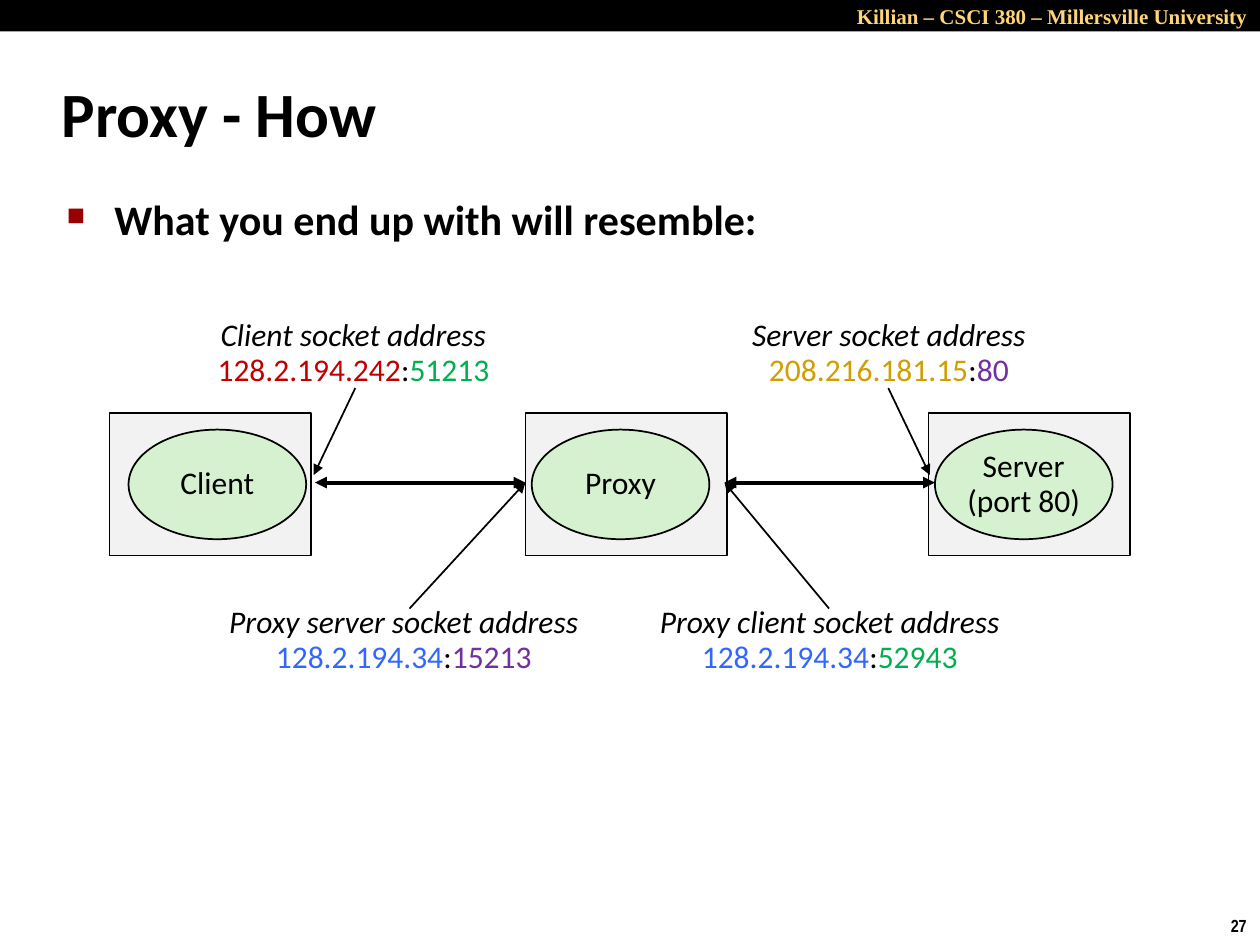
"""Build the slide that shows a proxy between a client and a server."""
from lxml import etree
from pptx import Presentation, util as u
from pptx.dml.color import RGBColor
from pptx.enum import shapes, text
from pptx.oxml.ns import qn

COLORS = {
    "black": "000000", "white": "FFFFFF", "gold": "FFD579", "bullet": "990000",
    "host": "F2F2F2", "process": "D5F1CF", "red": "C00000", "green": "00B050",
    "ochre": "D09E00", "purple": "7030A0", "blue": "3366FF",
}

deck = Presentation()
deck.slide_width, deck.slide_height = u.Inches(10), u.Inches(7.5)
COL, ROW = deck.slide_width / 100, deck.slide_height / 75


def cells(left, top, *size):
    """Turn columns and rows of the grid into lengths."""
    return [u.Emu(round(n * unit)) for n, unit in zip((left, top, *size), (COL, ROW) * 2)]


def write(shape, lines, size=18, font="Calibri", bold=False, align="CENTER",
          anchor="MIDDLE", spacing=0.93, wrap=False):
    """Fill a shape with lines of (words, colour, italic) runs."""
    frame = shape.text_frame
    frame.word_wrap = wrap
    frame.auto_size = text.MSO_AUTO_SIZE.NONE
    frame.vertical_anchor = text.MSO_ANCHOR[anchor]
    for number, line in enumerate(lines):
        paragraph = frame.add_paragraph() if number else frame.paragraphs[0]
        paragraph.alignment = text.PP_ALIGN[align]
        paragraph.line_spacing = spacing
        for words, color, italic in line:
            run = paragraph.add_run()
            run.text = words
            run.font.name, run.font.size = font, u.Pt(size)
            run.font.bold, run.font.italic = bold, italic
            run.font.color.rgb = RGBColor.from_string(COLORS[color])


slide = deck.slides.add_slide(deck.slide_layouts[5])
slide.background.fill.solid()
slide.background.fill.fore_color.rgb = RGBColor.from_string(COLORS["white"])

band = slide.shapes.add_shape(shapes.MSO_SHAPE.RECTANGLE, *cells(0, 0, 100, 2.5))
band.shadow.inherit = False
band.fill.solid()
band.fill.fore_color.rgb = RGBColor.from_string(COLORS["black"])
band.line.fill.background()

course = slide.shapes.add_textbox(*cells(50.8, 0, 49.2, 2.9))
write(course, [[("Killian – CSCI 380 – Millersville University", "gold", False)]],
      size=12, font="Times New Roman", bold=True, align="RIGHT", anchor="TOP", wrap=True)
page = slide.shapes.add_textbox(*cells(96.7, 72.3, 3.4, 2.7))
write(page, [[("27", "black", False)]],
      size=10, font="Arial Narrow", bold=True, align="LEFT", anchor="TOP")

heading = slide.shapes.title
heading.left, heading.top, heading.width, heading.height = cells(3.9, 4.8, 83, 8.3)
write(heading, [[("Proxy - How", "black", False)]],
      size=36, bold=True, align="LEFT", spacing=1.0, wrap=True)

outcome = slide.shapes.add_textbox(*cells(4.3, 14.9, 86.4, 9.3))
write(outcome, [[("What you end up with will resemble:", "black", False)]],
      size=24, bold=True, align="LEFT", anchor="TOP", spacing=1.0, wrap=True)
indent = outcome.text_frame.paragraphs[0]._p.get_or_add_pPr()
indent.set("marL", str(u.Inches(0.38)))
indent.set("indent", str(u.Inches(-0.38)))
bullet_color = etree.SubElement(indent, qn("a:buClr"))
etree.SubElement(bullet_color, qn("a:srgbClr"), val=COLORS["bullet"])
etree.SubElement(indent, qn("a:buSzPct"), val="60000")
etree.SubElement(indent, qn("a:buChar"), char="■")

hosts = [
    (8.7, 10.2, ["Client"]),
    (41.7, 42.2, ["Proxy"]),
    (73.7, 74.2, ["Server", "(port 80)"]),
]
for host_left, process_left, names in hosts:
    host = slide.shapes.add_shape(shapes.MSO_SHAPE.RECTANGLE, *cells(host_left, 32.8, 16, 11.3))
    process = slide.shapes.add_shape(shapes.MSO_SHAPE.OVAL, *cells(process_left, 34.1, 14.1, 8.7))
    for part, color in ((host, "host"), (process, "process")):
        part.shadow.inherit = False
        part.fill.solid()
        part.fill.fore_color.rgb = RGBColor.from_string(COLORS[color])
        part.line.color.rgb = RGBColor.from_string(COLORS["black"])
        part.line.width = u.Pt(1)
    write(process, [[(name, "black", False)] for name in names])

addresses = [
    (16, 24.7, 24.1, "Client", "128.2.194.242", "red", "51213", "green"),
    (56.4, 24.7, 28.3, "Server", "208.216.181.15", "ochre", "80", "purple"),
    (16.7, 47.5, 30.7, "Proxy server", "128.2.194.34", "blue", "15213", "purple"),
    (50.8, 47.5, 30.1, "Proxy client", "128.2.194.34", "blue", "52943", "green"),
]
for left, top, width, owner, ip, ip_color, port, port_color in addresses:
    address = slide.shapes.add_textbox(*cells(left, top, width, 6.7))
    write(address, [
        [(f"{owner} socket address", "black", True)],
        [(ip, ip_color, False), (":", "black", False), (port, port_color, False)],
    ])

arrows = [
    ((25, 38.3), (41.7, 38.3), 2.25, ["headEnd", "tailEnd"]),
    ((57.5, 38.3), (74.2, 38.3), 2.25, ["headEnd", "tailEnd"]),
    ((28.2, 30.8), (24.9, 37.7), 1, ["tailEnd"]),
    ((70.5, 30.8), (73.8, 37.7), 1, ["tailEnd"]),
    ((32.5, 48.3), (41.7, 38.3), 1, ["tailEnd"]),
    ((65.8, 48.3), (57.5, 38.3), 1, ["tailEnd"]),
]
for start, end, weight, tips in arrows:
    arrow = slide.shapes.add_connector(
        shapes.MSO_CONNECTOR.STRAIGHT, *cells(*start), *cells(*end))
    arrow.line.color.rgb = RGBColor.from_string(COLORS["black"])
    arrow.line.width = u.Pt(weight)
    for tip in tips:
        etree.SubElement(arrow.line._get_or_add_ln(), qn(f"a:{tip}"), type="triangle")
    etree.SubElement(arrow._element.spPr, qn("a:effectLst"))

deck.save("out.pptx")
